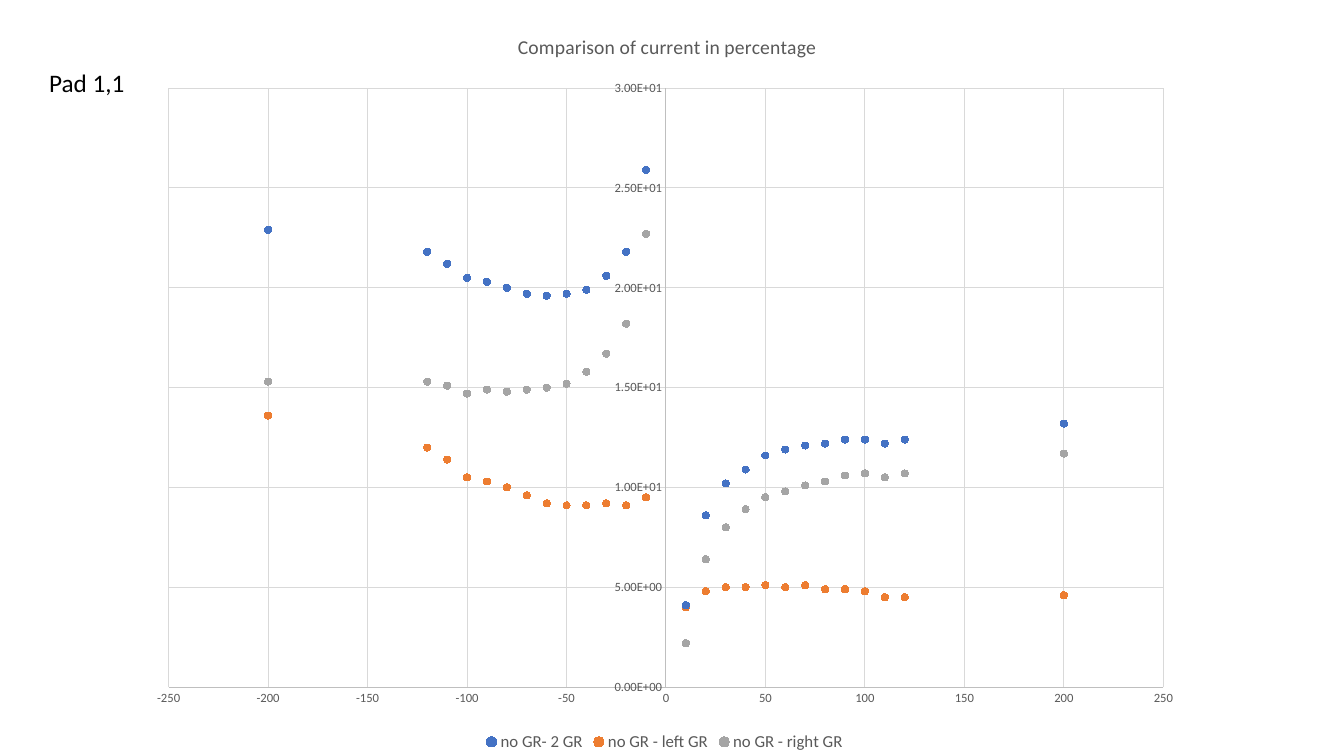
from dataclasses import dataclass

from lxml import etree
from pptx import Presentation
from pptx.chart import data
from pptx.dml.color import RGBColor
from pptx.enum import chart as kinds, text
from pptx.oxml import ns
from pptx.util import Cm, Pt


@dataclass(frozen=True)
class Theme:
    face: str = "Calibri"
    black: str = "000000"
    gray: str = "595959"
    line: str = "BFBFBF"
    grid: str = "D9D9D9"
    label: int = 18
    title: int = 14
    key: int = 12
    base: int = 10
    tick: int = 9


@dataclass(frozen=True)
class Trace:
    name: str
    tint: str
    left: tuple[float, ...]
    right: tuple[float, ...]


@dataclass(frozen=True)
class Scale:
    low: float
    high: float
    step: float
    form: str


THEME = Theme()
WIDE, HIGH = Cm(26.7), Cm(18.8)
STEPS = (*range(10, 130, 10), 200)
GAP = (-10, -10, 0, 0, 0, 0, 0, 10, 10)
VOLTS = (*(-v for v in reversed(STEPS)), *GAP, *STEPS)
TRACES = (
    Trace("no GR- 2 GR", "4472C4",
          (22.9, 21.8, 21.2, 20.5, 20.3, 20, 19.7, 19.6, 19.7, 19.9, 20.6, 21.8, 25.9),
          (4.1, 8.6, 10.2, 10.9, 11.6, 11.9, 12.1, 12.2, 12.4, 12.4, 12.2, 12.4, 13.2)),
    Trace("no GR - left GR", "ED7D31",
          (13.6, 12, 11.4, 10.5, 10.3, 10, 9.6, 9.2, 9.1, 9.1, 9.2, 9.1, 9.5),
          (4, 4.8, 5, 5, 5.1, 5, 5.1, 4.9, 4.9, 4.8, 4.5, 4.5, 4.6)),
    Trace("no GR - right GR", "A5A5A5",
          (15.3, 15.3, 15.1, 14.7, 14.9, 14.8, 14.9, 15, 15.2, 15.8, 16.7, 18.2, 22.7),
          (2.2, 6.4, 8, 8.9, 9.5, 9.8, 10.1, 10.3, 10.6, 10.7, 10.5, 10.7, 11.7)),
)


def style(font, size: int, tint: str) -> None:
    font.name = THEME.face
    font.size = Pt(size)
    font.bold = False
    font.color.rgb = RGBColor.from_string(tint)


def write(frame, msg: str, *, size: int, tint: str) -> None:
    part = frame.paragraphs[0].add_run()
    part.text = msg
    style(part.font, size, tint)


def stroke(line, tint: str) -> None:
    line.color.rgb = RGBColor.from_string(tint)
    line.width = Pt(0.75)


def place(node, index: int, **spots: object) -> None:
    for old in node.findall(ns.qn("c:layout")):
        node.remove(old)
    layout = etree.Element(ns.qn("c:layout"))
    node.insert(index, layout)
    manual = etree.SubElement(layout, ns.qn("c:manualLayout"))
    for name, val in spots.items():
        etree.SubElement(manual, ns.qn(f"c:{name}")).set("val", str(val))


def set_axis(axis, scale: Scale) -> None:
    axis.minimum_scale, axis.maximum_scale = scale.low, scale.high
    axis.major_unit = scale.step
    axis.major_tick_mark = axis.minor_tick_mark = kinds.XL_TICK_MARK.NONE
    axis.tick_label_position = kinds.XL_TICK_LABEL_POSITION.NEXT_TO_AXIS
    axis.tick_labels.number_format = scale.form
    axis.tick_labels.number_format_is_linked = False
    style(axis.tick_labels.font, THEME.tick, THEME.gray)
    axis.has_major_gridlines = True
    stroke(axis.major_gridlines.format.line, THEME.grid)
    stroke(axis.format.line, THEME.line)


def paint(plot, trace: Trace) -> None:
    tint = RGBColor.from_string(trace.tint)
    plot.smooth = False
    plot.format.line.fill.background()
    plot.marker.style = kinds.XL_MARKER_STYLE.CIRCLE
    plot.marker.size = 5
    plot.marker.format.fill.solid()
    plot.marker.format.fill.fore_color.rgb = tint
    stroke(plot.marker.format.line, trace.tint)


def drop_gaps(root) -> None:
    for point in list(root.iter(ns.qn("c:pt"))):
        if point.findtext(ns.qn("c:v")) in ("None", "", None):
            point.getparent().remove(point)


def add_graph(slide) -> None:
    table = data.XyChartData()
    for trace in TRACES:
        row = table.add_series(trace.name)
        for volt, val in zip(VOLTS, (*trace.left, *[None] * len(GAP), *trace.right)):
            row.add_data_point(volt, val)
    graph = slide.shapes.add_chart(kinds.XL_CHART_TYPE.XY_SCATTER,
                                   Cm(3.4), Cm(0.25), WIDE, HIGH, table).chart
    style(graph.font, THEME.base, THEME.black)
    graph.has_title = True
    write(graph.chart_title.text_frame, "Comparison of current in percentage",
          size=THEME.title, tint=THEME.gray)
    root = graph.element
    drop_gaps(root)
    place(root.find(".//" + ns.qn("c:title")), 1, xMode="edge", yMode="edge",
          x=Cm(9.56) / WIDE, y=Cm(0.49) / HIGH)
    place(root.find(".//" + ns.qn("c:plotArea")), 0, layoutTarget="inner",
          xMode="edge", yMode="edge", x=Cm(0.85) / WIDE, y=Cm(1.97) / HIGH,
          w=Cm(25.07) / WIDE, h=Cm(15.1) / HIGH)
    graph.has_legend = True
    graph.legend.position = kinds.XL_LEGEND_POSITION.BOTTOM
    graph.legend.include_in_layout = False
    style(graph.legend.font, THEME.key, THEME.gray)
    set_axis(graph.category_axis, Scale(-250, 250, 50, "General"))
    set_axis(graph.value_axis, Scale(0, 30, 5, "0.00E+00"))
    graph.plots[0].vary_by_categories = False
    for plot, trace in zip(graph.plots[0].series, TRACES):
        paint(plot, trace)


def add_label(slide) -> None:
    frame = slide.shapes.add_textbox(Cm(0.99), Cm(1.57), Cm(2.44), Cm(1.02)).text_frame
    frame.word_wrap = False
    frame.auto_size = text.MSO_AUTO_SIZE.SHAPE_TO_FIT_TEXT
    write(frame, "Pad 1,1", size=THEME.label, tint=THEME.black)


def main() -> None:
    deck = Presentation()
    deck.slide_width, deck.slide_height = Cm(33.87), Cm(19.05)
    slide = deck.slides.add_slide(deck.slide_layouts[6])
    add_label(slide)
    add_graph(slide)
    deck.save("out.pptx")


if __name__ == "__main__":
    main()
